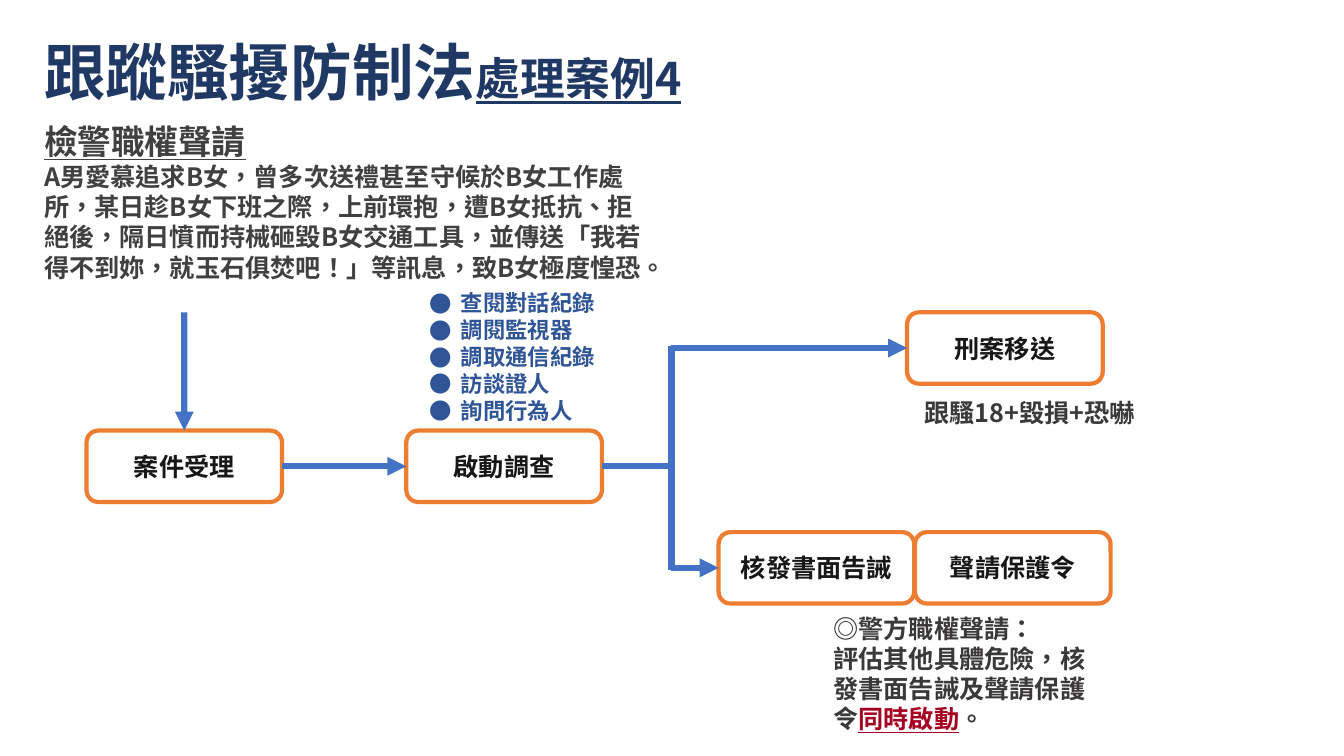
from lxml.etree import SubElement
from pptx import Presentation
from pptx.dml.color import RGBColor
from pptx.enum.lang import MSO_LANGUAGE_ID
from pptx.enum.shapes import MSO_CONNECTOR, MSO_SHAPE
from pptx.enum.text import MSO_ANCHOR, MSO_AUTO_SIZE, PP_ALIGN
from pptx.oxml.ns import qn
from pptx.util import Cm, Pt

FONT = "Noto Sans CJK SC"
NAVY = RGBColor(0x20, 0x38, 0x64)
BLUE = RGBColor(0x44, 0x72, 0xC4)
LIST_BLUE = RGBColor(0x2F, 0x55, 0x97)
ORANGE = RGBColor(0xED, 0x7D, 0x31)
BLACK = RGBColor(0x18, 0x17, 0x17)
GREY = RGBColor(0x40, 0x40, 0x40)
NOTE_GREY = RGBColor(0x3B, 0x38, 0x38)
RED = RGBColor(0xA5, 0x00, 0x21)

STEP_WIDTH, STEP_HEIGHT = 4.93, 1.8
TOP, LEFT, RIGHT = 0, 1, 3


def place(shape, box):
    shape.left, shape.top, shape.width, shape.height = (Cm(value) for value in box)


def style_paragraph(paragraph, size, color, align=PP_ALIGN.LEFT):
    paragraph.alignment = align
    paragraph.space_before = Pt(0)
    font = paragraph.font
    font.name, font.size, font.bold = FONT, Pt(size), True
    font.color.rgb = color
    properties = paragraph._p.pPr.find(qn("a:defRPr"))
    SubElement(properties, qn("a:ea")).set("typeface", FONT)


def add_run(paragraph, text, underline=None):
    run = paragraph.add_run()
    run.text = text
    run.font.language_id = MSO_LANGUAGE_ID.TRADITIONAL_CHINESE
    run.font.underline = underline
    return run


def prepare_frame(shape):
    frame = shape.text_frame
    frame.word_wrap = True
    frame.auto_size = MSO_AUTO_SIZE.SHAPE_TO_FIT_TEXT
    frame.vertical_anchor = MSO_ANCHOR.TOP
    return frame


def add_text_frame(slide, box):
    return prepare_frame(slide.shapes.add_textbox(*(Cm(value) for value in box)))


def fill_title(title, box):
    place(title, box)
    paragraph = prepare_frame(title).paragraphs[0]
    paragraph.line_spacing = Pt(60)
    style_paragraph(paragraph, 44, NAVY)
    add_run(paragraph, "跟蹤騷擾防制法")
    add_run(paragraph, "處理案例4", underline=True).font.size = Pt(32)


def fill_investigation_list(body, box):
    place(body, box)
    frame = prepare_frame(body)
    items = ["查閱對話紀錄", "調閱監視器", "調取通信紀錄", "訪談證人", "詢問行為人"]
    for index, item in enumerate(items):
        paragraph = frame.add_paragraph() if index else frame.paragraphs[0]
        properties = paragraph._p.get_or_add_pPr()
        properties.set("marL", str(Cm(0.79)))
        properties.set("indent", str(-Cm(0.79)))
        SubElement(properties, qn("a:buFont")).set("typeface", FONT)
        SubElement(properties, qn("a:buChar")).set("char", "●")
        style_paragraph(paragraph, 16, LIST_BLUE)
        add_run(paragraph, item)


def add_case_description(slide, box):
    frame = add_text_frame(slide, box)
    heading = frame.paragraphs[0]
    style_paragraph(heading, 24, GREY)
    add_run(heading, "檢警職權聲請", underline=True)
    story = frame.add_paragraph()
    style_paragraph(story, 18, GREY)
    add_run(story, "A男愛慕追求B女，曾多次送禮甚至守候於B女工作處所，某日趁B女下班之際，"
                   "上前環抱，遭B女抵抗、拒絕後，隔日憤而持械砸毀B女交通工具，並傳送"
                   "「我若得不到妳，就玉石俱焚吧！」等訊息，致B女極度惶恐。")


def add_charges_note(slide, box):
    paragraph = add_text_frame(slide, box).paragraphs[0]
    style_paragraph(paragraph, 18, NOTE_GREY)
    add_run(paragraph, "跟騷18+毀損+恐嚇")


def add_police_note(slide, box):
    frame = add_text_frame(slide, box)
    heading = frame.paragraphs[0]
    style_paragraph(heading, 18, NOTE_GREY)
    add_run(heading, "◎警方職權聲請：")
    detail = frame.add_paragraph()
    style_paragraph(detail, 18, NOTE_GREY)
    add_run(detail, "評估其他具體危險，核發書面告誡及聲請保護令")
    add_run(detail, "同時啟動", underline=True).font.color.rgb = RED
    add_run(detail, "。")


def add_step(slide, left, top, text):
    step = slide.shapes.add_shape(MSO_SHAPE.ROUNDED_RECTANGLE, Cm(left), Cm(top),
                                  Cm(STEP_WIDTH), Cm(STEP_HEIGHT))
    step.shadow.inherit = False
    step.fill.background()
    step.line.color.rgb = ORANGE
    step.line.width = Pt(3)
    frame = step.text_frame
    frame.word_wrap = True
    frame.vertical_anchor = MSO_ANCHOR.MIDDLE
    paragraph = frame.paragraphs[0]
    style_paragraph(paragraph, 18, BLACK, PP_ALIGN.CENTER)
    add_run(paragraph, text)
    return step


def add_line(slide, start, end, source=None, target=None, side=LEFT, arrow=True):
    """Draw a flow line, joined to the right of source and the given side of target."""
    line = slide.shapes.add_connector(MSO_CONNECTOR.STRAIGHT,
                                      *(Cm(value) for value in (*start, *end)))
    line.line.color.rgb = BLUE
    line.line.width = Pt(4.5)
    if arrow:
        SubElement(line.line._get_or_add_ln(), qn("a:tailEnd")).set("type", "triangle")
    SubElement(line._element.spPr, qn("a:effectLst"))
    if source is not None:
        line.begin_connect(source, RIGHT)
    if target is not None:
        line.end_connect(target, side)


def add_flow(slide, box):
    left, top, width, height = box
    middle_top, bottom_top = top + 2.98, top + height - STEP_HEIGHT
    investigate_left = left + 8.06
    warning_left = left + 15.93
    order_left = left + width - STEP_WIDTH
    accept = add_step(slide, left, middle_top, "案件受理")
    investigate = add_step(slide, investigate_left, middle_top, "啟動調查")
    transfer = add_step(slide, left + 20.68, top, "刑案移送")
    warning = add_step(slide, warning_left, bottom_top, "核發書面告誡")
    add_step(slide, order_left, bottom_top, "聲請保護令")

    trunk = left + 14.74
    half = STEP_HEIGHT / 2
    upper, middle, lower = top + half, middle_top + half, bottom_top + half
    overlap = 0.06
    entry = left + STEP_WIDTH / 2
    add_line(slide, (entry, top), (entry, middle_top), target=accept, side=TOP)
    add_line(slide, (left + STEP_WIDTH, middle), (investigate_left, middle),
             accept, investigate)
    add_line(slide, (investigate_left + STEP_WIDTH, middle), (trunk, middle),
             investigate, arrow=False)
    add_line(slide, (trunk, upper - overlap), (trunk, lower + overlap), arrow=False)
    add_line(slide, (trunk, upper), (left + 20.68, upper), target=transfer)
    add_line(slide, (trunk, lower), (warning_left, lower), target=warning)


def main():
    presentation = Presentation()
    presentation.slide_width, presentation.slide_height = Cm(33.87), Cm(19.05)
    slide = presentation.slides.add_slide(presentation.slide_layouts[1])
    fill_title(slide.shapes.title, (0.86, 0.48, 17.37, 2.39))
    add_flow(slide, (2.18, 7.87, 25.81, 7.34))
    fill_investigation_list(slide.placeholders[1], (10.57, 7.16, 4.83, 3.68))
    add_case_description(slide, (0.86, 2.92, 15.7, 4.37))
    add_police_note(slide, (20.75, 15.32, 7.04, 3.33))
    add_charges_note(slide, (23.04, 9.88, 7.04, 1.8))
    presentation.save("out.pptx")


if __name__ == "__main__":
    main()
